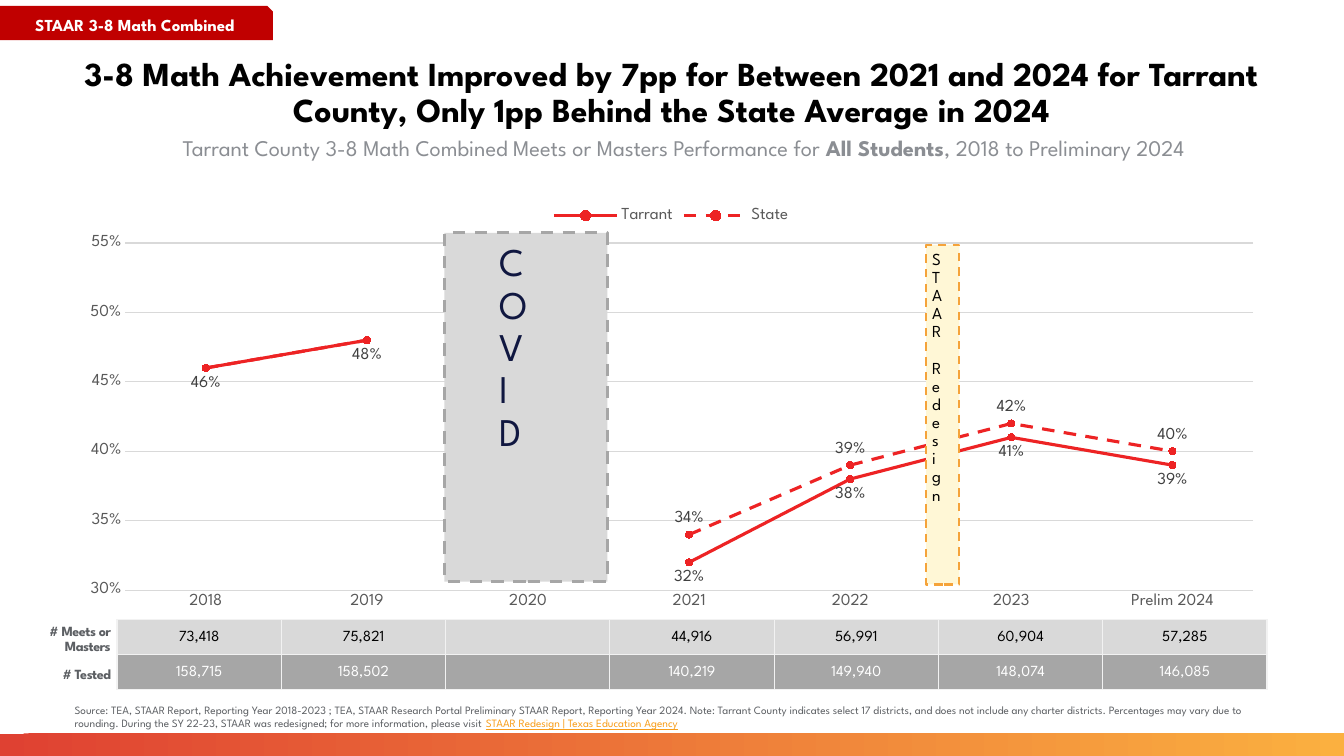
import pptx
import pptx.chart.data
import pptx.dml.color
import pptx.enum.chart
import pptx.enum.dml
import pptx.enum.shapes
import pptx.enum.text
import pptx.oxml
import pptx.oxml.ns
import pptx.util
from pptx.util import Cm

RGBColor = pptx.dml.color.RGBColor
Pt = pptx.util.Pt
Shape = pptx.enum.shapes.MSO_SHAPE
Align = pptx.enum.text.PP_ALIGN
Anchor = pptx.enum.text.MSO_ANCHOR
Dash = pptx.enum.dml.MSO_LINE
LabelPosition = pptx.enum.chart.XL_LABEL_POSITION

FONT = "League Spartan"
BLACK = RGBColor(0x00, 0x00, 0x00)
WHITE = RGBColor(0xFF, 0xFF, 0xFF)
NAVY = RGBColor(0x10, 0x17, 0x40)
RED = RGBColor(0xED, 0x23, 0x24)
DARK_RED = RGBColor(0xC0, 0x00, 0x00)
ORANGE = RGBColor(0xF8, 0x9E, 0x1B)
AMBER = RGBColor(0xF5, 0xA3, 0x3A)
CREAM = RGBColor(0xFF, 0xF7, 0xD6)
BAR_START = RGBColor(0xDF, 0x41, 0x32)
BAR_END = RGBColor(0xFB, 0xB0, 0x40)
SUBTITLE_GRAY = RGBColor(0x8B, 0x8E, 0x93)
NOTE_GRAY = RGBColor(0x5C, 0x5F, 0x63)
AXIS_GRAY = RGBColor(0x59, 0x59, 0x59)
LABEL_GRAY = RGBColor(0x40, 0x40, 0x40)
LIGHT_GRAY = RGBColor(0xD9, 0xD9, 0xD9)
MID_GRAY = RGBColor(0xA6, 0xA6, 0xA6)

YEARS = ["2018", "2019", "2020", "2021", "2022", "2023", "Prelim 2024"]
TARRANT = [0.46, 0.48, None, 0.32, 0.38, 0.41, 0.39]
STATE = [0.46, 0.48, None, 0.34, 0.39, 0.42, 0.40]
BELOW, ABOVE = LabelPosition.BELOW, LabelPosition.ABOVE
TARRANT_LABELS = {point: BELOW for point in range(3, 7)}
STATE_LABELS = {0: BELOW, 1: BELOW} | {point: ABOVE for point in range(3, 7)}
STUDENT_ROWS = [
    (["73,418", "75,821", "", "44,916", "56,991", "60,904", "57,285"], LIGHT_GRAY, BLACK),
    (["158,715", "158,502", "", "140,219", "149,940", "148,074", "146,085"], MID_GRAY, WHITE),
]
SOURCE_NOTE = (
    "Source: TEA, STAAR Report, Reporting Year 2018-2023 ; TEA, STAAR Research Portal "
    "Preliminary STAAR Report, Reporting Year 2024. Note: Tarrant County indicates select "
    "17 districts, and does not include any charter districts. Percentages may vary due to "
    "rounding. During the SY 22-23, STAAR was redesigned; for more information, please visit "
)
SNUG = Cm(0.15)


def set_attributes(target, values):
    for name, value in values.items():
        setattr(target, name, value)


def set_font(font, size, color, **extras):
    set_attributes(font, {"name": FONT, "size": Pt(size), **extras})
    font.color.rgb = color


def set_text(shape, runs, align=Align.LEFT, anchor=Anchor.TOP, margins=None,
             spacing=None, tracking=None, stacked=False, wrap=True):
    """Fill a shape with one paragraph; each run is (text, size, color, font extras)."""
    frame = shape.text_frame
    set_attributes(frame, {"word_wrap": wrap, "vertical_anchor": anchor})
    if margins is not None:
        sides = ("margin_left", "margin_top", "margin_right", "margin_bottom")
        set_attributes(frame, dict(zip(sides, margins)))
    if stacked:
        frame._txBody.bodyPr.set("vert", "wordArtVert")
    paragraph = frame.paragraphs[0]
    set_attributes(paragraph, {"alignment": align, "line_spacing": spacing})
    for text, size, color, extras in runs:
        run = paragraph.add_run()
        run.text = text
        set_font(run.font, size, color, **extras)
        if tracking:
            run._r.get_or_add_rPr().set("spc", str(tracking))


def add_text(slide, box, runs, **layout):
    set_text(slide.shapes.add_textbox(*map(Cm, box)), runs, **layout)


def add_panel(slide, kind, box, fill=None, line=None, width=0):
    """Add a preset shape, with a dashed outline when a line color is given."""
    shape = slide.shapes.add_shape(kind, *map(Cm, box))
    shape.shadow.inherit = False
    if fill is not None:
        shape.fill.solid()
        shape.fill.fore_color.rgb = fill
    if line is None:
        shape.line.fill.background()
    else:
        shape.line.color.rgb = line
        set_attributes(shape.line, {"width": Pt(width), "dash_style": Dash.DASH})
    return shape


def add_gradient_bar(slide):
    bar = add_panel(slide, Shape.RECTANGLE, (0, 18.49, 33.87, 0.56))
    bar.fill.gradient()
    bar.fill.gradient_angle = 1
    for stop, color in zip(bar.fill.gradient_stops, (BAR_START, BAR_END)):
        stop.color.rgb = color


def style_axis(axis):
    no_ticks = pptx.enum.chart.XL_TICK_MARK.NONE
    set_attributes(axis, {"major_tick_mark": no_ticks, "minor_tick_mark": no_ticks})
    set_font(axis.tick_labels.font, 12, AXIS_GRAY)


def style_series(series, dash, label_positions):
    series.smooth = False
    series.format.line.color.rgb = RED
    set_attributes(series.format.line, {"width": Pt(2.25), "dash_style": dash})
    marker = series.marker
    set_attributes(marker, {"style": pptx.enum.chart.XL_MARKER_STYLE.CIRCLE, "size": 5})
    marker.format.fill.solid()
    marker.format.fill.fore_color.rgb = RED
    marker.format.line.color.rgb = RED
    series.data_labels.show_value = False
    for point, position in label_positions.items():
        label = series.points[point].data_label
        set_font(label.font, 12, LABEL_GRAY)
        label.position = position


def fix_plot_area(chart, **fractions):
    """Pin the inner plot area at fractions of the chart's size."""
    places = "".join(f'<c:{name} val="{value}"/>' for name, value in fractions.items())
    layout = pptx.oxml.parse_xml(
        f'<c:layout {pptx.oxml.ns.nsdecls("c")}><c:manualLayout>'
        '<c:layoutTarget val="inner"/><c:xMode val="edge"/><c:yMode val="edge"/>'
        f"{places}</c:manualLayout></c:layout>")
    plot_area = chart._chartSpace.chart.plotArea
    for old_layout in plot_area.findall(pptx.oxml.ns.qn("c:layout")):
        plot_area.remove(old_layout)
    plot_area.insert(0, layout)


def add_performance_chart(slide):
    data = pptx.chart.data.CategoryChartData(number_format="0%")
    data.categories = YEARS
    data.add_series("Tarrant", TARRANT)
    data.add_series("State", STATE)
    kind = pptx.enum.chart.XL_CHART_TYPE.LINE_MARKERS
    box = map(Cm, (1.63, 4.95, 30.56, 10.67))
    chart = slide.shapes.add_chart(kind, *box, data).chart
    set_font(chart.font, 10, BLACK)
    set_attributes(chart, {"has_title": False, "has_legend": True})
    set_attributes(chart.legend, {"position": pptx.enum.chart.XL_LEGEND_POSITION.TOP,
                                  "include_in_layout": False})
    set_font(chart.legend.font, 12, AXIS_GRAY)
    chart.plots[0].vary_by_categories = False
    tarrant, state = chart.plots[0].series
    style_series(tarrant, Dash.SOLID, TARRANT_LABELS)
    style_series(state, Dash.DASH, STATE_LABELS)

    style_axis(chart.category_axis)
    style_axis(chart.value_axis)
    value_axis = chart.value_axis
    set_attributes(value_axis, {"minimum_scale": 0.3, "maximum_scale": 0.55, "major_unit": 0.05})
    set_attributes(value_axis.tick_labels, {"number_format": "0%",
                                            "number_format_is_linked": False})
    value_axis.format.line.fill.background()
    for line in (value_axis.major_gridlines.format.line, chart.category_axis.format.line):
        line.color.rgb = LIGHT_GRAY
        line.width = Pt(0.75)
    fix_plot_area(chart, x=0.05, y=0.11, w=0.93, h=0.82)


def add_cell_borders(cell):
    properties = cell._tc.get_or_add_tcPr()
    for position, side in enumerate(("lnL", "lnR", "lnT", "lnB")):
        properties.insert(position, pptx.oxml.parse_xml(
            f'<a:{side} {pptx.oxml.ns.nsdecls("a")} w="12700"><a:solidFill>'
            f'<a:srgbClr val="F2F2F2"/></a:solidFill></a:{side}>'))


def add_student_table(slide):
    box = map(Cm, (2.95, 15.62, 28.98, 1.76))
    table = slide.shapes.add_table(len(STUDENT_ROWS), len(YEARS), *box).table
    set_attributes(table, {"first_row": False, "horz_banding": False})
    for row, (counts, fill, color) in enumerate(STUDENT_ROWS):
        for column, count in enumerate(counts):
            cell = table.cell(row, column)
            set_attributes(cell, {"margin_left": Cm(0.03), "margin_right": Cm(0.03),
                                  "margin_top": Cm(0.03), "margin_bottom": 0,
                                  "vertical_anchor": Anchor.MIDDLE})
            cell.fill.solid()
            cell.fill.fore_color.rgb = fill
            add_cell_borders(cell)
            if count:
                paragraph = cell.text_frame.paragraphs[0]
                paragraph.alignment = Align.CENTER
                run = paragraph.add_run()
                run.text = count
                set_font(run.font, 11, color)


def main():
    presentation = pptx.Presentation()
    set_attributes(presentation, {"slide_width": Cm(33.87), "slide_height": Cm(19.05)})
    slide = presentation.slides.add_slide(presentation.slide_layouts[6])
    bold = {"bold": True}
    snug_middle = {"anchor": Anchor.MIDDLE, "margins": [SNUG] * 4}
    stacked = {**snug_middle, "spacing": 0.9, "tracking": -30, "stacked": True}
    row_label = {**snug_middle, "spacing": 0.9, "tracking": -30, "align": Align.RIGHT}

    add_gradient_bar(slide)
    add_text(slide, (1.63, 3.45, 30.56, 1.02), [
        ("Tarrant County 3-8 Math Combined Meets or Masters Performance for ", 16, SUBTITLE_GRAY, {}),
        ("All Students", 16, SUBTITLE_GRAY, bold),
        (", 2018 to Preliminary 2024", 16, SUBTITLE_GRAY, {}),
    ], align=Align.CENTER, margins=(Cm(0.64), 0, 0, 0), spacing=0.9)
    add_text(slide, (1.63, 1.45, 30.58, 2.29), [
        ("3-8 Math Achievement Improved by 7pp for Between 2021 and 2024 for Tarrant County, "
         "Only 1pp Behind the State Average in 2024", 24, BLACK, bold),
    ], align=Align.CENTER, margins=[0] * 4, spacing=0.9)
    add_performance_chart(slide)
    section_tab = add_panel(slide, Shape.SNIP_1_RECTANGLE, (0, 0.15, 6.88, 0.86), DARK_RED)
    set_text(section_tab, [("STAAR 3-8 Math Combined", 12, WHITE, bold)],
             align=Align.CENTER, **snug_middle)
    add_panel(slide, Shape.RECTANGLE, (11.2, 5.87, 4.11, 8.79), LIGHT_GRAY, MID_GRAY, 2.25)
    add_text(slide, (12.45, 5.97, 1.65, 8.69), [("COVID", 28, NAVY, {})], **stacked)
    redesign = add_panel(slide, Shape.RECTANGLE, (23.34, 6.17, 0.84, 8.56), CREAM, AMBER, 1.5)
    set_text(redesign, [("STAAR Redesign", 12, BLACK, {})], **stacked)
    add_text(slide, (1.63, 17.6, 30.56, 0.81), [
        (SOURCE_NOTE, 8, NOTE_GRAY, {}),
        ("STAAR Redesign | Texas Education Agency", 8, ORANGE, {"underline": True}),
    ])
    add_text(slide, (1.3, 16.69, 1.65, 0.66), [("# Tested", 10, NOTE_GRAY, bold)],
             wrap=False, **row_label)
    add_student_table(slide)
    add_text(slide, (0.53, 15.57, 2.41, 1.07), [("# Meets or Masters", 10, NOTE_GRAY, bold)],
             **row_label)
    presentation.save("out.pptx")


if __name__ == "__main__":
    main()
